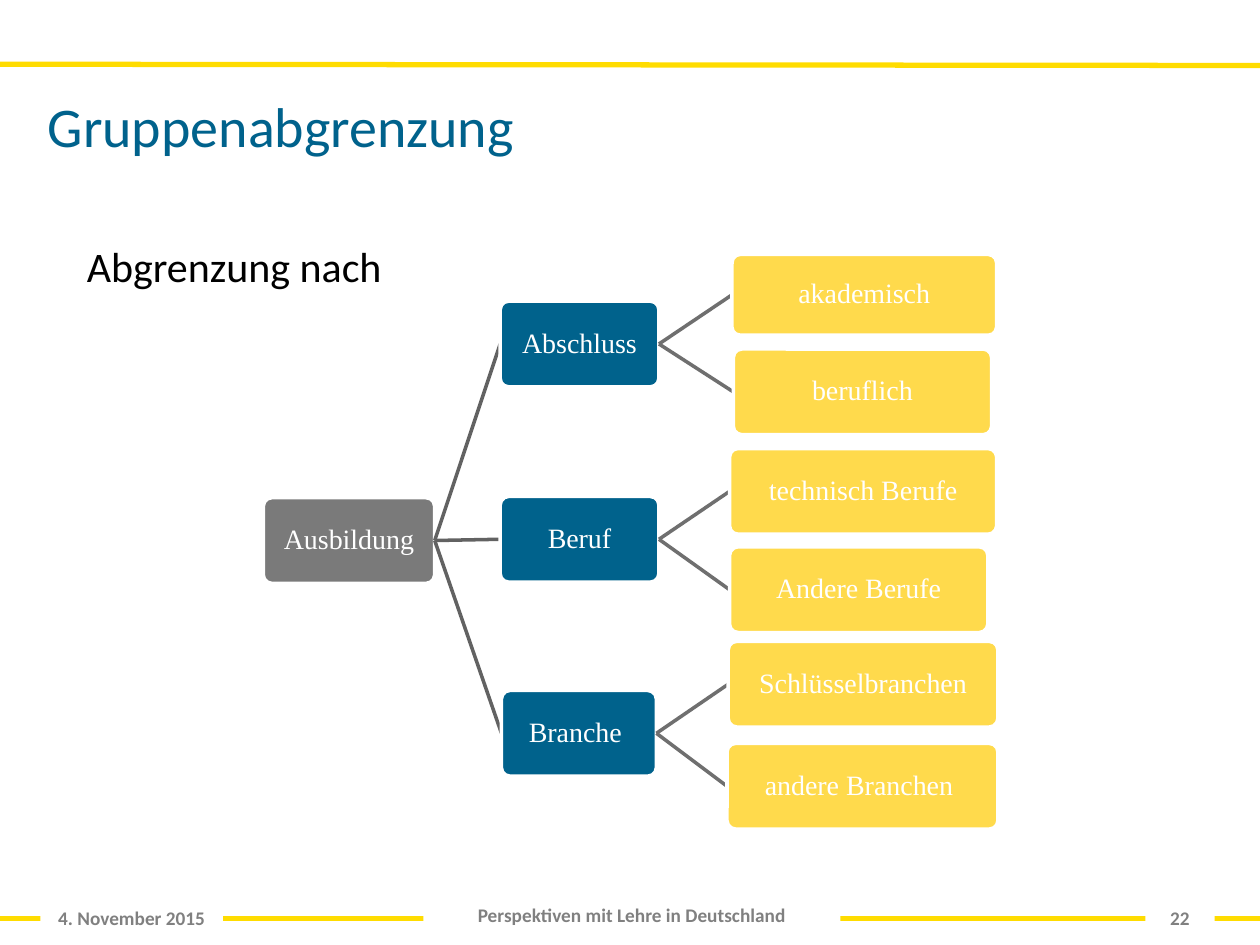
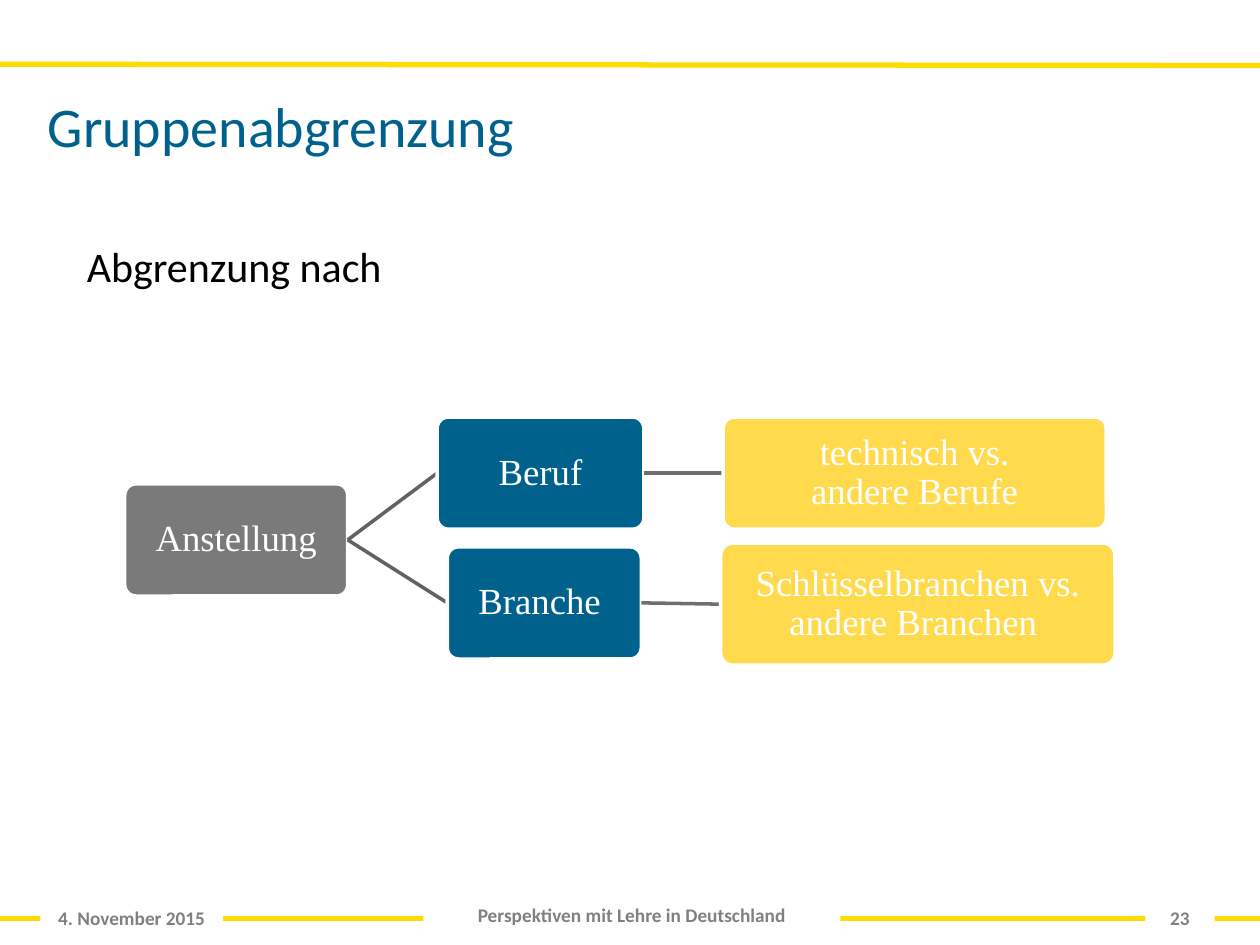
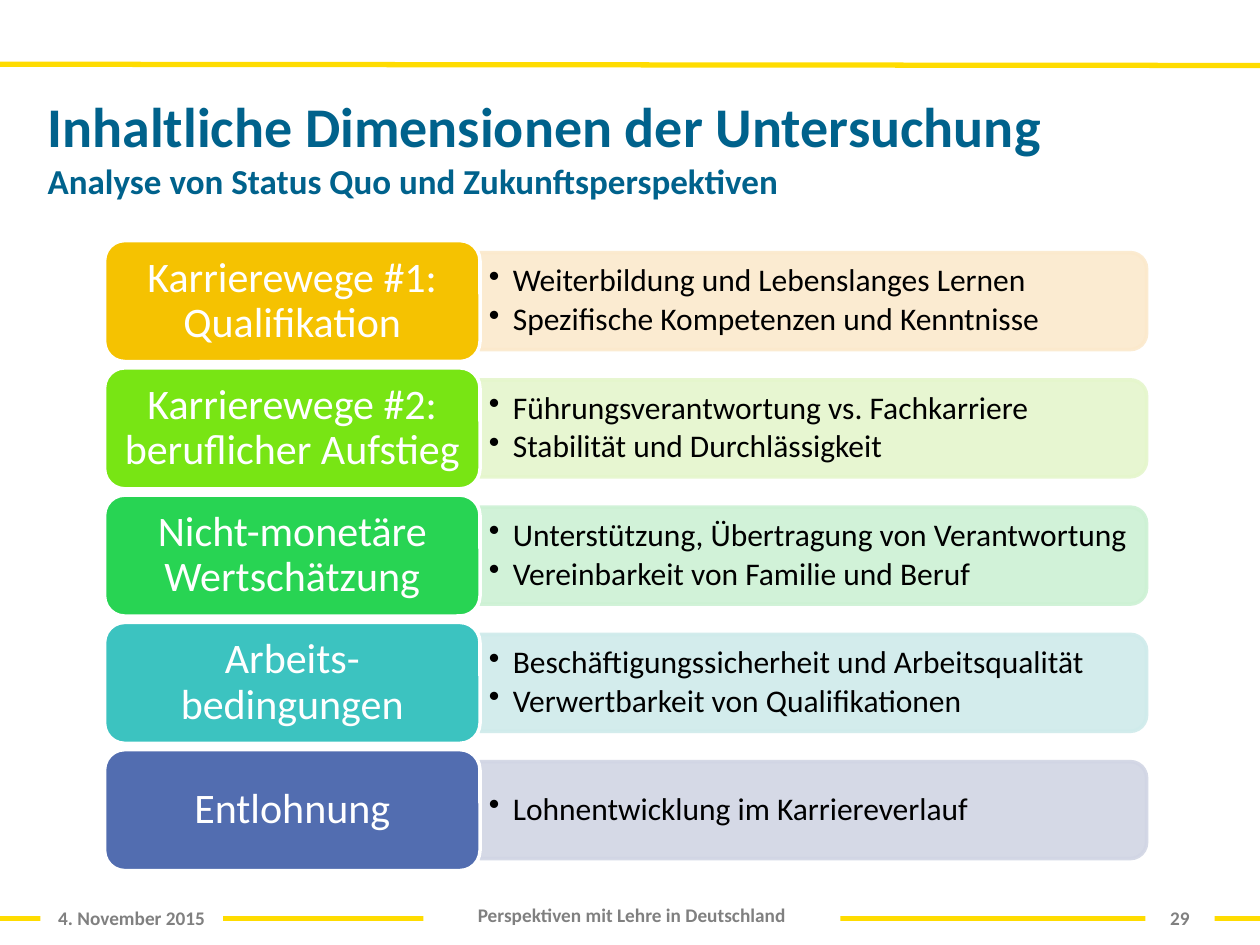
from lxml.etree import SubElement
from pptx import Presentation
from pptx.dml.color import RGBColor
from pptx.enum.shapes import MSO_CONNECTOR, MSO_SHAPE
from pptx.enum.text import MSO_ANCHOR, PP_ALIGN
from pptx.oxml.ns import qn
from pptx.util import Inches, Pt

COLS, ROWS = 10, 7.5
UNIT = Inches(1)
COLORS = {
    "white": "FFFFFF", "black": "000000", "band": "FFDC00", "title": "00628C",
    "footer": "808080",
}
SANS, SERIF = "Calibri", "Times New Roman"
LEVEL_FILLS = ["7A7A7A", "00628C", "FFDA4C"]
LEVEL_LINKS = ["626262", "6F6F6F"]

TRAINING = ("Ausbildung", (2.09, 3.95, 1.36, 0.68), [
    ("Abschluss", (3.97, 2.39, 1.26, 0.68), [
        ("akademisch", (5.81, 2.02, 2.1, 0.64), []),
        ("beruflich", (5.82, 2.77, 2.05, 0.68), [])]),
    ("Beruf", (3.97, 3.94, 1.26, 0.68), [
        ("technisch Berufe", (5.79, 3.56, 2.12, 0.68), []),
        ("Andere Berufe", (5.79, 4.34, 2.05, 0.68), [])]),
    ("Branche ", (3.98, 5.48, 1.23, 0.68), [
        ("Schlüsselbranchen", (5.78, 5.09, 2.14, 0.68), []),
        ("andere Branchen ", (5.77, 5.9, 2.15, 0.68), [])]),
])
EMPLOYMENT = ("Anstellung", (0.99, 3.84, 1.77, 0.89), [
    ("Beruf", (3.47, 3.31, 1.64, 0.89), [
        ("technisch vs.\vandere Berufe", (5.74, 3.31, 3.04, 0.89), [])]),
    ("Branche ", (3.55, 4.34, 1.54, 0.89), [
        ("Schlüsselbranchen vs. andere Branchen ", (5.72, 4.31, 3.13, 0.97), [])]),
])
DIMENSIONS = [
    ("Karrierewege #1: Qualifikation", "F5C201", "FBE9CC",
     ["Weiterbildung und Lebenslanges Lernen",
      "Spezifische Kompetenzen und Kenntnisse"]),
    ("Karrierewege #2: beruflicher Aufstieg", "78E514", "E5F6CC",
     ["Führungsverantwortung vs. Fachkarriere",
      "Stabilität und Durchlässigkeit"]),
    ("Nicht-monetäre Wertschätzung", "28D453", "CDF1D4",
     ["Unterstützung, Übertragung von Verantwortung",
      "Vereinbarkeit von Familie und Beruf"]),
    ("Arbeits-bedingungen", "3CC3C0", "CFEBEB",
     ["Beschäftigungssicherheit und Arbeitsqualität",
      "Verwertbarkeit von Qualifikationen"]),
    ("Entlohnung", "526DB0", "D1D5E4",
     ["Lohnentwicklung im Karriereverlauf"]),
]


def grid(*cells):
    return [int(cell * UNIT) for cell in cells]


def rgb(color):
    return RGBColor.from_string(COLORS.get(color, color))


def write(tf, text, size=18, font=SANS, color="black", bold=False,
          align=PP_ALIGN.LEFT, spacing=None, after=0, bullet=None):
    p = tf.paragraphs[0] if not tf.text else tf.add_paragraph()
    if bullet:
        indent = int(0.19 * UNIT)
        pPr = p._p.get_or_add_pPr()
        pPr.set("marL", str(indent))
        pPr.set("indent", str(-indent))
        SubElement(pPr, qn("a:buChar")).set("char", bullet)
    p.text = text
    p.alignment = align
    p.space_after = Pt(after)
    if spacing:
        p.line_spacing = spacing
    for r in p.runs:
        r.font.size, r.font.name, r.font.bold = Pt(size), font, bold
        r.font.color.rgb = rgb(color)


def set_frame(tf, anchor=MSO_ANCHOR.TOP, inset=(0.1, 0.05)):
    tf.word_wrap = True
    tf.vertical_anchor = anchor
    tf.margin_left = tf.margin_right = int(inset[0] * UNIT)
    tf.margin_top = tf.margin_bottom = int(inset[1] * UNIT)
    return tf


def add_box(s, at, **frame):
    return set_frame(s.shapes.add_textbox(*grid(*at)).text_frame, **frame)


def add_block(s, kind, at, fill, line=None, opacity=None):
    sp = s.shapes.add_shape(kind, *grid(*at))
    sp.shadow.inherit = False
    sp.fill.solid()
    sp.fill.fore_color.rgb = rgb(fill)
    if line:
        sp.line.color.rgb = rgb(line)
        sp.line.width = Pt(2)
    else:
        sp.line.fill.background()
    if opacity:
        for clr in sp._element.spPr.iter(qn("a:srgbClr")):
            SubElement(clr, qn("a:alpha")).set("val", str(opacity * 1000))
    return sp


def add_line(s, start, end, color, width):
    cxn = s.shapes.add_connector(MSO_CONNECTOR.STRAIGHT, *grid(*start, *end))
    cxn.line.color.rgb = rgb(color)
    cxn.line.width = Pt(width)
    SubElement(cxn._element.spPr, qn("a:effectLst"))


def add_footer(s, text, at):
    sp = add_block(s, MSO_SHAPE.RECTANGLE, at, "white")
    write(set_frame(sp.text_frame), text, size=11, color="footer", bold=True,
          align=PP_ALIGN.CENTER)


def add_slide(prs, number, title, subtitle=None):
    s = prs.slides.add_slide(prs.slide_layouts[6])
    add_line(s, (0, 7.29), (COLS, 7.29), "band", 3)
    add_line(s, (0, 0.51), (COLS, 0.52), "band", 3)
    add_footer(s, "4. November 2015", (0.32, 7.14, 1.45, 0.24))
    add_footer(s, "Perspektiven mit Lehre in Deutschland", (3.36, 7.12, 3.31, 0.25))
    add_footer(s, str(number), (9.09, 7.14, 0.55, 0.24))
    tf = add_box(s, (0.28, 0.68, 9.45, 1.18 if subtitle else 0.79))
    write(tf, title, size=32, color="title", bold=bool(subtitle))
    if subtitle:
        write(tf, subtitle, size=20, color="title", bold=True)
    return s


def add_tree(s, node, size, level=0):
    text, (left, top, width, height), children = node
    sp = add_block(s, MSO_SHAPE.ROUNDED_RECTANGLE, (left, top, width, height),
                   LEVEL_FILLS[level], line="white")
    sp.adjustments[0] = 0.1
    write(set_frame(sp.text_frame, MSO_ANCHOR.MIDDLE, (0.01, 0.01)), text,
          size=size, font=SERIF, color="white", align=PP_ALIGN.CENTER, spacing=0.9)
    for child in children:
        x, y, _, h = child[1]
        add_line(s, (left + width, top + height / 2), (x, y + h / 2),
                 LEVEL_LINKS[level], 2)
        add_tree(s, child, size, level + 1)


def add_tree_slide(prs, number, tree, size):
    s = add_slide(prs, number, "Gruppenabgrenzung")
    write(add_box(s, (0.59, 1.86, 8.82, 4.96)), "Abgrenzung nach", size=24)
    add_tree(s, tree, size)


def add_dimension(s, top, heading, fill, tint, points):
    left, width, height = 0.83, 2.98, 0.96
    middle = top + height / 2
    depth, length = 0.77, 5.29
    panel_left = left + width
    panel = add_block(s, MSO_SHAPE.ROUND_2_SAME_RECTANGLE,
                      (panel_left + (length - depth) / 2, middle - length / 2,
                       depth, length), tint, line=tint, opacity=90)
    panel.rotation = 90
    tf = add_box(s, (panel_left, middle - 0.35, 5.25, 0.7),
                 anchor=MSO_ANCHOR.MIDDLE, inset=(0.07, 0.04))
    for point in points:
        write(tf, point, spacing=0.9, after=2.7, bullet="•")
    label = add_block(s, MSO_SHAPE.ROUNDED_RECTANGLE, (left, top, width, height),
                      fill, line="white")
    write(set_frame(label.text_frame, MSO_ANCHOR.MIDDLE, (0.08, 0.05)), heading,
          size=24, color="white", align=PP_ALIGN.CENTER, spacing=0.9)


def main():
    prs = Presentation()
    prs.slide_width, prs.slide_height = grid(COLS, ROWS)
    add_tree_slide(prs, 22, TRAINING, 16)
    add_tree_slide(prs, 23, EMPLOYMENT, 21)
    s = add_slide(prs, 29, "Inhaltliche Dimensionen der Untersuchung",
                  "Analyse von Status Quo und Zukunftsperspektiven")
    for i, dimension in enumerate(DIMENSIONS):
        add_dimension(s, 1.91 + 1.01 * i, *dimension)
    prs.save("out.pptx")


if __name__ == "__main__":
    main()
